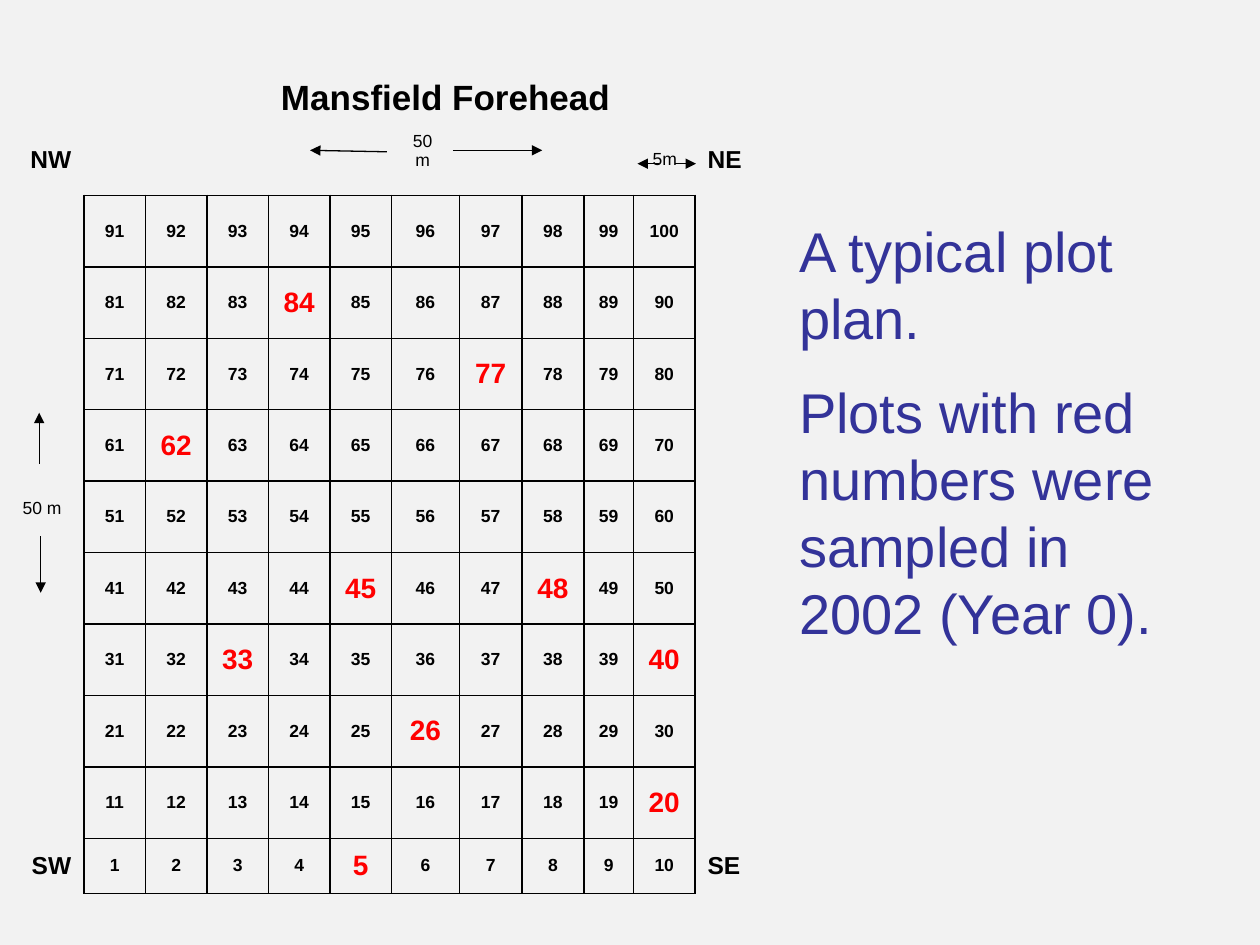
from lxml import etree
from pptx import Presentation, util as u
from pptx.dml.color import RGBColor
from pptx.enum import shapes, text as t
from pptx.oxml import ns

BLACK, RED, BLUE, GREY = "000000", "FF0000", "333399", "F2F2F2"
LEFT, MID, RIGHT = t.PP_ALIGN.LEFT, t.PP_ALIGN.CENTER, t.PP_ALIGN.RIGHT
PLAIN = "{2D5ABB26-0587-4C30-8999-92F81FD0307C}"
SAMPLED = {5, 20, 26, 33, 40, 45, 48, 62, 77, 84}


def paint(fill, shade):
    """Give a fill or line fill one solid colour."""
    fill.solid()
    fill.fore_color.rgb = RGBColor.from_string(shade)


def write(para, words, size=10, bold=False, shade=BLACK, align=MID):
    """Write one formatted run into a paragraph."""
    para.alignment = align
    run = para.add_run()
    run.text = words
    run.font.name = "Arial"
    run.font.size = u.Pt(size)
    run.font.bold = bold
    paint(run.font.fill, shade)


def edge(cell, sides):
    """Draw thin black borders on the listed sides of a cell."""
    props = cell._tc.get_or_add_tcPr()
    for side in "LRTB":
        drawn = side in sides
        line = etree.SubElement(props, ns.qn("a:ln" + side), w=str(u.Pt(1) if drawn else 0))
        if drawn:
            solid = etree.SubElement(line, ns.qn("a:solidFill"))
            etree.SubElement(solid, ns.qn("a:srgbClr"), val=BLACK)
        else:
            etree.SubElement(line, ns.qn("a:noFill"))
    cell.fill.background()


def grid(slide, x, y, cols, rows):
    """Add an unstyled table with the given column widths and row heights."""
    frame = slide.shapes.add_table(len(rows), len(cols), u.Cm(x), u.Cm(y),
                                   u.Cm(sum(cols)), u.Cm(sum(rows)))
    table = frame.table
    table.first_row = table.horz_banding = False
    table._tbl.tblPr.find(ns.qn("a:tableStyleId")).text = PLAIN
    for col, wide in zip(table.columns, cols):
        col.width = u.Cm(wide)
    for row, high in zip(table.rows, rows):
        row.height = u.Cm(high)
    return table


def put(cell, words, low=False, **form):
    """Write text into a table cell, centred in height or set low."""
    cell.vertical_anchor = t.MSO_ANCHOR.BOTTOM if low else t.MSO_ANCHOR.MIDDLE
    write(cell.text_frame.paragraphs[0], words, **form)


def plan(slide, x, y):
    """Draw the numbered plot plan with its title and corner names."""
    cols = [1.69] + [1.24] * 5 + [1.37, 1.26, 1.25, 1, 1.24, 1.7]
    table = grid(slide, x, y, cols, [1.44] * 11 + [1.11])
    for r in range(12):
        for c in range(12):
            cell = table.cell(r, c)
            inner = 1 <= c <= 10
            if r < 2:
                edge(cell, "B" if r == 1 and inner else "")
            elif not inner:
                edge(cell, "L" if c else "R")
            else:
                edge(cell, "LRTB")
                plot = (11 - r) * 10 + c
                hit = plot in SAMPLED
                put(cell, str(plot), bold=True, size=16 if hit else 10,
                    shade=RED if hit else BLACK)
    table.cell(0, 4).merge(table.cell(0, 9))
    table.cell(1, 4).merge(table.cell(1, 5))
    put(table.cell(0, 4), "Mansfield Forehead", low=True, size=20, bold=True, align=LEFT)
    for r, side in ((1, "N"), (11, "S")):
        put(table.cell(r, 0), side + "W", size=14, bold=True, align=RIGHT)
        put(table.cell(r, 11), side + "E", size=14, bold=True, align=LEFT)


def arrow(slide, x1, y1, x2, y2):
    """Draw a thin line with an arrowhead at its second point."""
    line = slide.shapes.add_connector(shapes.MSO_CONNECTOR.STRAIGHT,
                                      u.Cm(x1), u.Cm(y1), u.Cm(x2), u.Cm(y2))
    line.line.width = u.Pt(0.75)
    paint(line.line.fill, BLACK)
    etree.SubElement(line.line._get_or_add_ln(), ns.qn("a:tailEnd"), type="triangle")
    etree.SubElement(line._element.spPr, ns.qn("a:effectLst"))


def label(slide, x, y, wide, high, words="", low=False):
    """Place a borderless one-cell table."""
    cell = grid(slide, x, y, [wide], [high]).cell(0, 0)
    edge(cell, "")
    if words:
        put(cell, words, low=low)


def size(slide, x, y, wide, high, words, arrows, low=False):
    """Place a length label and its arrows, measured from the label's corner."""
    for x1, y1, x2, y2 in arrows:
        arrow(slide, x + x1, y + y1, x + x2, y + y2)
    label(slide, x, y, wide, high, words, low)


def note(slide, x, y, wide, high, lines):
    """Place the explanatory paragraphs."""
    frame = slide.shapes.add_textbox(u.Cm(x), u.Cm(y), u.Cm(wide), u.Cm(high)).text_frame
    frame.word_wrap = True
    frame.auto_size = t.MSO_AUTO_SIZE.SHAPE_TO_FIT_TEXT
    for i, words in enumerate(lines):
        para = frame.add_paragraph() if i else frame.paragraphs[0]
        para.space_before = u.Pt(15 if i else 0)
        write(para, words, size=32, shade=BLUE, align=LEFT)


def main():
    """Build and save the slide."""
    deck = Presentation()
    deck.slide_width, deck.slide_height = u.Cm(25.4), u.Cm(19.05)
    slide = deck.slides.add_slide(deck.slide_layouts[6])
    paint(slide.background.fill, GREY)
    plan(slide, 0, 1.06)
    size(slide, 7.9, 2.5, 1.24, 1.09, "50 m",
         [(-0.1, 0.56, -1.65, 0.53), (1.23, 0.53, 3.03, 0.53)])
    size(slide, 12.78, 2.5, 1.24, 1.04, "5m",
         [(0.5, 0.8, 0.07, 0.8), (0.83, 0.8, 1.25, 0.8)], low=True)
    label(slide, 0.03, 8.25, 1.63, 1.44)
    size(slide, 0.03, 9.69, 1.63, 1.12, "50 m",
         [(0.76, -0.34, 0.76, -1.37), (0.79, 1.12, 0.79, 2.26)])
    note(slide, 15.86, 4.24, 8.69, 9.14,
         ["A typical plot plan.", "Plots with red numbers were sampled in 2002 (Year 0)."])
    deck.save("out.pptx")


if __name__ == "__main__":
    main()
